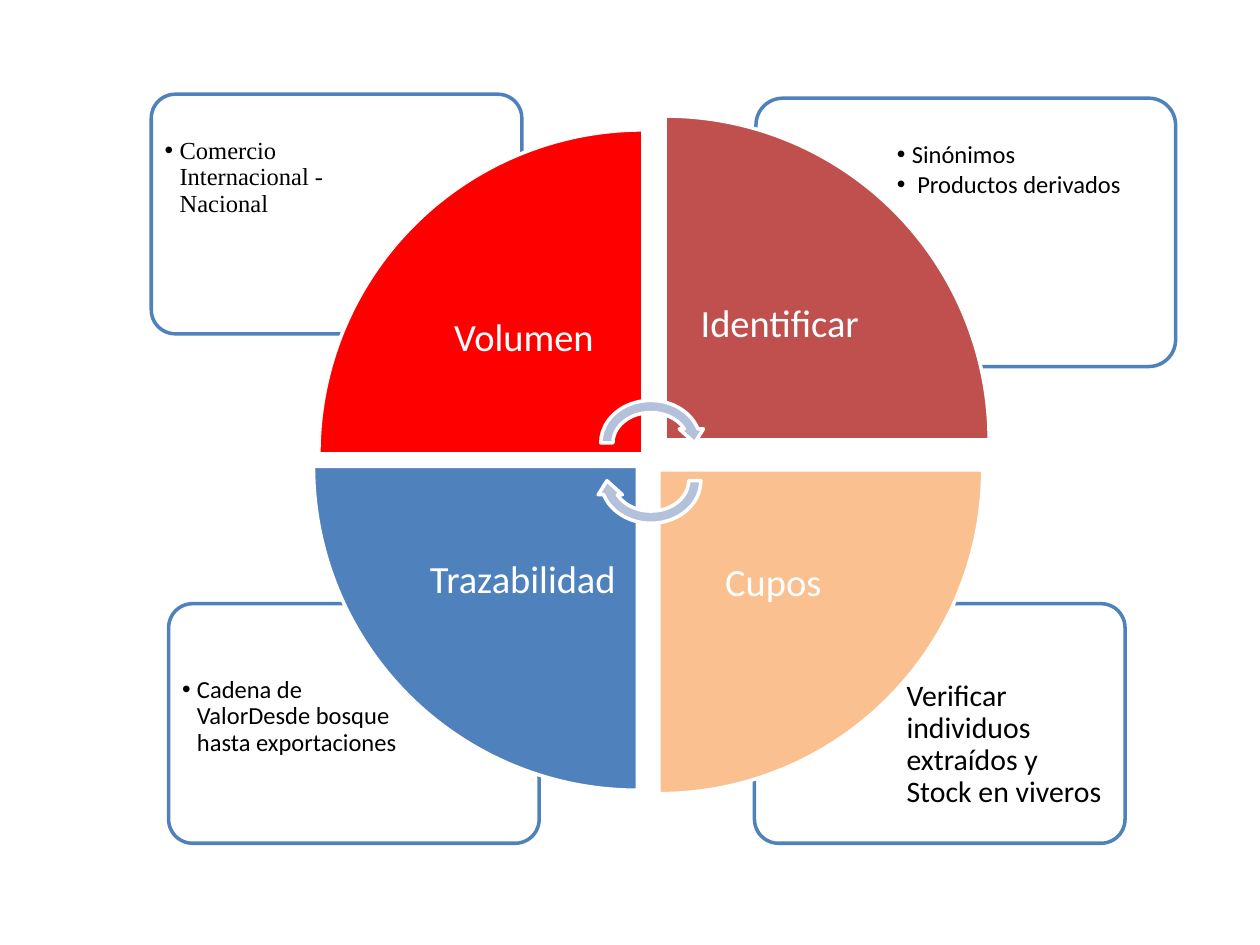
from lxml.etree import SubElement
from pptx import Presentation
from pptx.dml.color import RGBColor
from pptx.enum.shapes import MSO_SHAPE
from pptx.enum.text import MSO_ANCHOR, PP_ALIGN
from pptx.oxml.ns import qn
from pptx.util import Cm, Pt

HUES = {
    "white": "FFFFFF", "black": "000000", "blue": "4F81BD", "red": "FF0000",
    "brick": "C0504D", "peach": "FAC090", "pale": "B3C1DB",
}


def tint(name):
    return RGBColor.from_string(HUES[name])


def draw(slide, kind, box, fill, line, turn=0):
    """Add a preset shape with a flat fill and a 2 pt line."""
    shape = slide.shapes.add_shape(kind, *map(Cm, box))
    shape.shadow.inherit = False
    shape.fill.solid()
    shape.fill.fore_color.rgb = tint(fill)
    shape.line.color.rgb = tint(line)
    shape.line.width = Pt(2)
    shape.rotation = turn
    return shape


def write(slide, box, lines, size, hue, pad, after, font="Calibri"):
    """Add a wrapped text box with one paragraph per line."""
    frame = slide.shapes.add_textbox(*map(Cm, box)).text_frame
    frame.word_wrap = True
    frame.margin_left = frame.margin_right = Cm(pad)
    frame.margin_top = frame.margin_bottom = Cm(pad)
    frame.text = "\n".join(lines)
    for para in frame.paragraphs:
        para.line_spacing = 0.9
        para.space_after = Pt(size * after)
        for run in para.runs:
            run.font.size = Pt(size)
            run.font.name = font
            run.font.color.rgb = tint(hue)
    return frame


def add_card(slide, box, right, low, lines, size=14, font="Calibri",
             pad=0.16, hang=0.3):
    """Rounded card whose bullets sit in its outer corner."""
    left, top, wide, high = box
    card = draw(slide, MSO_SHAPE.ROUNDED_RECTANGLE, box, "white", "blue")
    card.adjustments[0] = 0.1
    color = card.fill._xPr.find(qn("a:solidFill"))[0]
    SubElement(color, qn("a:alpha"), val="90000")

    edge, wt, ht = 0.11, wide * 0.67, high * 0.705
    x = left + (wide - wt - edge if right else edge)
    y = top + (high - ht - edge if low else edge)
    frame = write(slide, (x, y, wt, ht), lines, size, "black", pad, 0.15, font)
    if not low:
        frame.margin_top = Cm(pad + 0.61)
    for para in frame.paragraphs:
        props = para._p.get_or_add_pPr()
        props.set("marL", str(Cm(hang)))
        props.set("indent", str(-Cm(hang)))
        SubElement(props, qn("a:buFont"), typeface="Arial")
        SubElement(props, qn("a:buChar"), char="•")


def add_wedge(slide, left, top, turn, fill, label):
    """Quarter of the wheel, with its label near the hub."""
    side, inner = 6.53, 4.62
    draw(slide, MSO_SHAPE.PIE_WEDGE, (left, top, side, side), fill, "white", turn)
    x = left + (side - inner if turn in (0, 270) else 0)
    y = top + (side - inner if turn in (0, 90) else 0)
    frame = write(slide, (x, y, inner, inner), [label], 22, "white", 0.42, 0.35)
    frame.vertical_anchor = MSO_ANCHOR.MIDDLE
    frame.paragraphs[0].alignment = PP_ALIGN.CENTER


def add_hub(slide, left, top):
    """Two arrows turning around the centre."""
    for drop, turn in ((0, 0), (0.76, 180)):
        draw(slide, MSO_SHAPE.CIRCULAR_ARROW, (left, top + drop, 2.26, 1.96),
             "pale", "white", turn)


def main():
    deck = Presentation()
    deck.slide_width, deck.slide_height = Cm(25.4), Cm(19.05)
    slide = deck.slides.add_slide(deck.slide_layouts[6])

    # Corner cards
    wide, high = 7.47, 4.83
    add_card(slide, (15.21, 12.17, wide, high), True, True,
             ["Verificar  individuos extraídos y Stock en viveros"],
             size=17, pad=0.23, hang=0.48)
    add_card(slide, (3.4, 12.17, wide, high), False, True,
             ["Cadena de ValorDesde bosque hasta exportaciones"])
    add_card(slide, (15.24, 1.98, 8.46, 5.41), True, False,
             ["Sinónimos", " Productos derivados"])
    add_card(slide, (3.05, 1.9, wide, high), False, False,
             ["Comercio Internacional - Nacional"], font="Times New Roman")

    # Wheel
    add_wedge(slide, 6.43, 2.62, 0, "red", "Volumen ")
    add_wedge(slide, 13.41, 2.34, 90, "brick", "Identificar")
    add_wedge(slide, 13.28, 9.47, 180, "peach", "Cupos")
    add_wedge(slide, 6.32, 9.4, 270, "blue", "Trazabilidad")
    add_hub(slide, 11.99, 7.95)

    deck.save("out.pptx")


if __name__ == "__main__":
    main()
